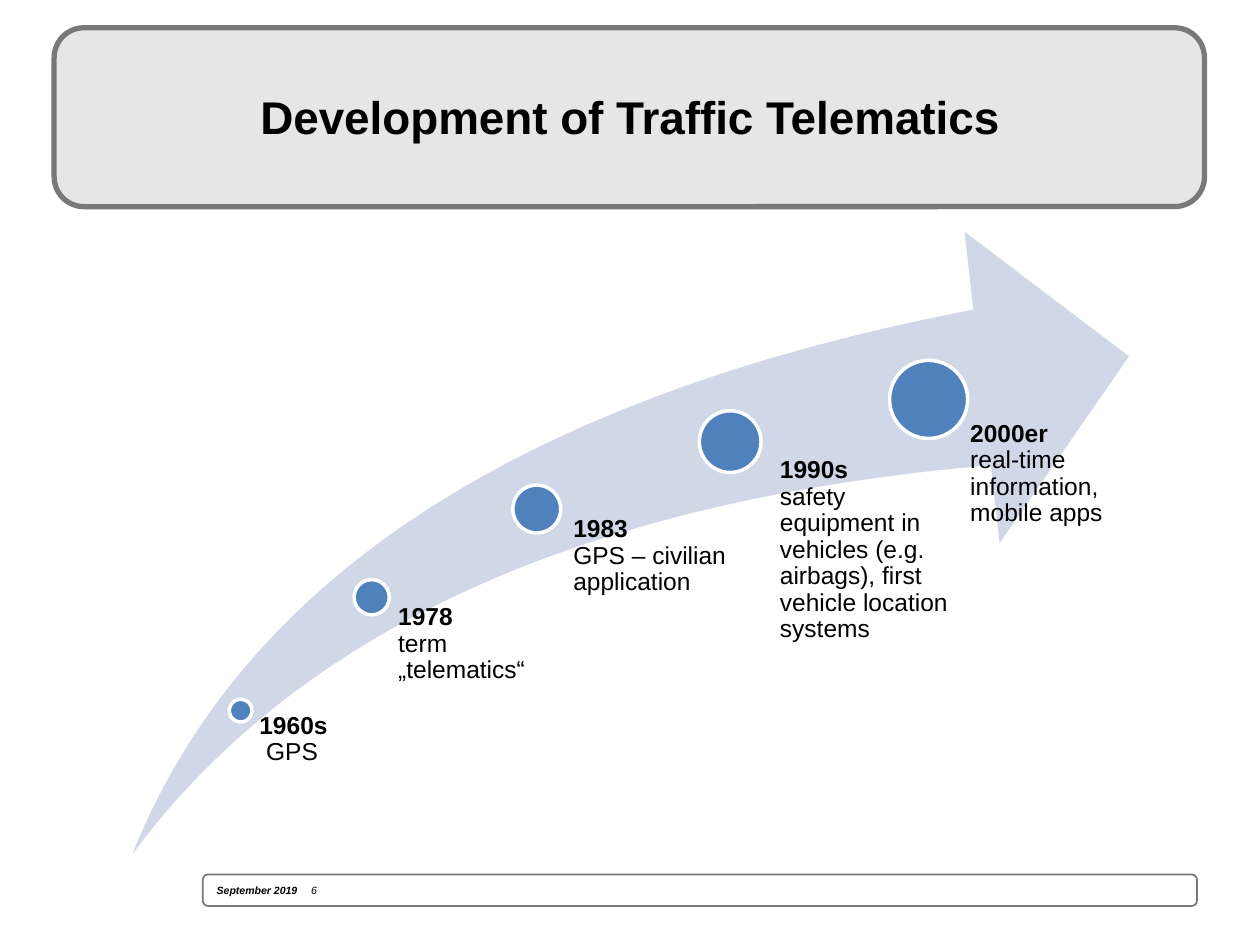
from lxml import etree
from pptx import Presentation
from pptx.dml.color import RGBColor
from pptx.enum.shapes import MSO_SHAPE
from pptx.enum.text import MSO_ANCHOR, MSO_AUTO_SIZE, PP_ALIGN
from pptx.oxml.ns import qn
from pptx.util import Inches, Pt

ROUNDED, SWOOSH, OVAL = MSO_SHAPE.ROUNDED_RECTANGLE, MSO_SHAPE.SWOOSH_ARROW, MSO_SHAPE.OVAL
MIDDLE, TOP = MSO_ANCHOR.MIDDLE, MSO_ANCHOR.TOP
LEFT, CENTER = PP_ALIGN.LEFT, PP_ALIGN.CENTER
NO_AUTOFIT = MSO_AUTO_SIZE.NONE

COLORS = {
    "text": "000000",
    "border": "787878",
    "panel": "E7E6E6",
    "footer": "FFFFFF",
    "arrow": "D0D8E8",
    "dot": "4F81BD",
    "ring": "FFFFFF",
}

MILESTONES = [
    ("1960s", " GPS", (1.82, 5.55, 0.18), (1.96, 5.66, 1.45, 1.02), 0.1),
    ("1978", "term „telematics“", (2.81, 4.6, 0.28), (3.01, 4.8, 1.31, 2.07), 0.15),
    ("1983", "GPS – civilian application", (4.07, 3.85, 0.38), (4.35, 4.1, 1.53, 2.78), 0.2),
    ("1990s", "safety equipment in vehicles (e.g. airbags), first vehicle location systems",
     (5.55, 3.26, 0.49), (5.93, 3.63, 1.65, 1.29), 0.26),
    ("2000er", "real-time information, mobile apps",
     (7.06, 2.86, 0.62), (7.37, 3.34, 1.58, 1.41), 0.33),
]


class TimelineSlide:
    """Holds the style and the current slide and draws each kind of element."""

    font_name = "Arial"

    def __init__(self, presentation):
        self.slide = presentation.slides.add_slide(presentation.slide_layouts[5])
        self.shapes = self.slide.shapes

    def color(self, key):
        return RGBColor.from_string(COLORS[key])

    def run(self, paragraph, text, size, **styles):
        run = paragraph.add_run()
        run.text = text
        formats = {"name": self.font_name, "size": Pt(size), **styles}
        for attribute, value in formats.items():
            setattr(run.font, attribute, value)
        run.font.color.rgb = self.color("text")

    def frame(self, shape, anchor, **margins):
        frame = shape.text_frame
        formats = {"word_wrap": True, "auto_size": NO_AUTOFIT, "vertical_anchor": anchor}
        for attribute, value in formats.items():
            setattr(frame, attribute, value)
        for side, margin in margins.items():
            setattr(frame, f"margin_{side}", Inches(margin))
        return frame.paragraphs[0]

    def shape(self, kind, box, fill, line=None, width=1):
        shape = self.shapes.add_shape(kind, *map(Inches, box))
        shape.shadow.inherit = False
        shape.fill.solid()
        shape.fill.fore_color.rgb = self.color(fill)
        if line:
            shape.line.color.rgb = self.color(line)
            shape.line.width = Pt(width)
        else:
            shape.line.fill.background()
        return shape

    def title(self, text, box):
        title = self.shapes.title
        self.shapes._spTree.append(title._element)
        for attribute, value in zip(("left", "top", "width", "height"), box):
            setattr(title, attribute, Inches(value))
        paragraph = self.frame(title, MIDDLE)
        paragraph.alignment = CENTER
        self.run(paragraph, text, 26.2, bold=True)

    def footer(self, date, number, box):
        bar = self.shape(ROUNDED, box, "footer", "border")
        paragraph = self.frame(bar, MIDDLE)
        paragraph.alignment = LEFT
        tabs = etree.SubElement(paragraph._p.get_or_add_pPr(), qn("a:tabLst"))
        etree.SubElement(tabs, qn("a:tab"), pos=str(Inches(0.75)), algn="l")
        self.run(paragraph, date + "\t", 6, bold=True, italic=True)
        self.run(paragraph, number, 6, bold=False, italic=True)

    def arrow(self, box):
        arrow = self.shape(SWOOSH, box, "arrow")
        for index in range(2):
            arrow.adjustments[index] = 0.25

    def milestone(self, year, event, dot, label_box, indent):
        left, top, diameter = dot
        self.shape(OVAL, (left, top, diameter, diameter), "dot", "ring", 2)
        label = self.shapes.add_textbox(*map(Inches, label_box))
        paragraph = self.frame(label, TOP, left=indent, top=0, right=0, bottom=0)
        paragraph.line_spacing = 0.9
        self.run(paragraph, year, 14, bold=True)
        paragraph.add_line_break()
        self.run(paragraph, event, 14, bold=False)


def main():
    presentation = Presentation()
    presentation.slide_width, presentation.slide_height = Inches(10), Inches(7.5)
    timeline = TimelineSlide(presentation)
    timeline.footer("September 2019", "6", (1.61, 6.94, 7.89, 0.25))
    timeline.shape(ROUNDED, (0.43, 0.22, 9.13, 1.42), "panel", "border", 3)
    timeline.title("Development of Traffic Telematics", (0.59, 0.3, 8.82, 1.25))
    timeline.arrow((1.05, 1.84, 7.91, 4.94))
    for milestone in MILESTONES:
        timeline.milestone(*milestone)
    presentation.save("out.pptx")


if __name__ == "__main__":
    main()
